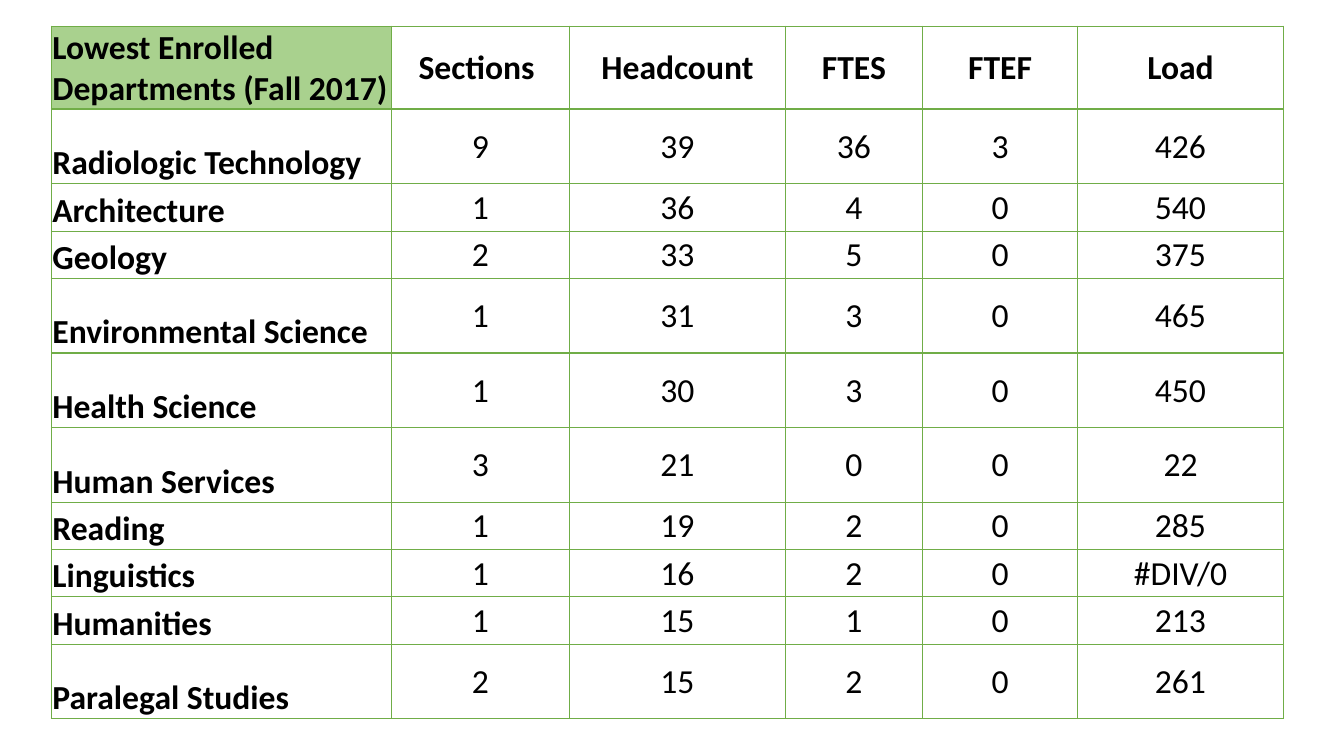
from lxml.etree import SubElement
from pptx import Presentation
from pptx.dml.color import RGBColor
from pptx.enum.text import MSO_ANCHOR as ANCHOR, PP_ALIGN as ALIGN
from pptx.oxml.ns import qn
from pptx.util import Inches, Pt

BLACK = RGBColor(0x00, 0x00, 0x00)
GREEN = RGBColor(0x70, 0xAD, 0x47)
LIGHT_GREEN = RGBColor(0xA9, 0xD1, 0x8E)

TALL, SHORT = 0.74, 0.47
COL_WIDTHS = [3.37, 1.77, 2.14, 1.36, 1.54, 2.04]
HEADER = ["Lowest Enrolled Departments (Fall 2017)", "Sections ",
          "Headcount", "FTES", "FTEF", "Load"]
DEPARTMENTS = [
    (TALL, ["Radiologic Technology", "9", "39", "36", "3", "426"]),
    (SHORT, ["Architecture", "1", "36", "4", "0", "540"]),
    (SHORT, ["Geology", "2", "33", "5", "0", "375"]),
    (TALL, ["Environmental Science", "1", "31", "3", "0", "465"]),
    (TALL, ["Health Science", "1", "30", "3", "0", "450"]),
    (TALL, ["Human Services", "3", "21", "0", "0", "22"]),
    (SHORT, ["Reading", "1", "19", "2", "0", "285"]),
    (SHORT, ["Linguistics", "1", "16", "2", "0", "#DIV/0"]),
    (SHORT, ["Humanities", "1", "15", "1", "0", "213"]),
    (TALL, ["Paralegal Studies", "2", "15", "2", "0", "261"]),
]


class SlideBuilder:
    """Holds the text style and the current slide."""

    def __init__(self, slide, font="Calibri", size=24):
        self.slide, self.font, self.size = slide, font, size

    def table(self, left, top, widths, rows):
        """Adds a table from (height, texts) rows, the first being the header."""
        heights = [height for height, _ in rows]
        tbl = self.slide.shapes.add_table(
            len(rows), len(widths), Inches(left), Inches(top),
            Inches(sum(widths)), Inches(sum(heights))).table
        tbl.first_row = tbl.horz_banding = False
        for col, width in zip(tbl.columns, widths):
            col.width = Inches(width)
        for i, (height, texts) in enumerate(rows):
            tbl.rows[i].height = Inches(height)
            for j, text in enumerate(texts):
                cell = tbl.cell(i, j)
                self.text(cell, text, bold=i == 0 or j == 0, label=j == 0)
                self.borders(cell, bottom=2 if i == 0 else 1,
                             top=2 if i == 1 else 1)
                cell.fill.background()
        return tbl

    def text(self, cell, text, bold, label):
        """Writes one cell, a label at bottom left or a centred value."""
        cell.margin_left = cell.margin_right = cell.margin_top = Inches(0.01)
        cell.margin_bottom = 0
        cell.vertical_anchor = ANCHOR.BOTTOM if label else ANCHOR.MIDDLE
        p = cell.text_frame.paragraphs[0]
        p.alignment = ALIGN.LEFT if label else ALIGN.CENTER
        r = p.add_run()
        r.text = text
        r.font.name, r.font.size, r.font.bold = self.font, Pt(self.size), bold
        r.font.color.rgb = BLACK

    def borders(self, cell, top, bottom):
        """Draws the four green borders of a cell."""
        tc_pr = cell._tc.get_or_add_tcPr()
        for side, width in (("L", 1), ("R", 1), ("T", top), ("B", bottom)):
            ln = SubElement(tc_pr, qn(f"a:ln{side}"), w=str(Pt(width)))
            fill = SubElement(ln, qn("a:solidFill"))
            SubElement(fill, qn("a:srgbClr"), val=str(GREEN))


def main():
    """Builds the enrollment slide."""
    prs = Presentation()
    prs.slide_width, prs.slide_height = Inches(13.33), Inches(7.5)
    builder = SlideBuilder(prs.slides.add_slide(prs.slide_layouts[6]))
    tbl = builder.table(0.51, 0.26, COL_WIDTHS, [(0.79, HEADER)] + DEPARTMENTS)
    corner = tbl.cell(0, 0)
    corner.fill.solid()
    corner.fill.fore_color.rgb = LIGHT_GREEN
    prs.save("out.pptx")


if __name__ == "__main__":
    main()
